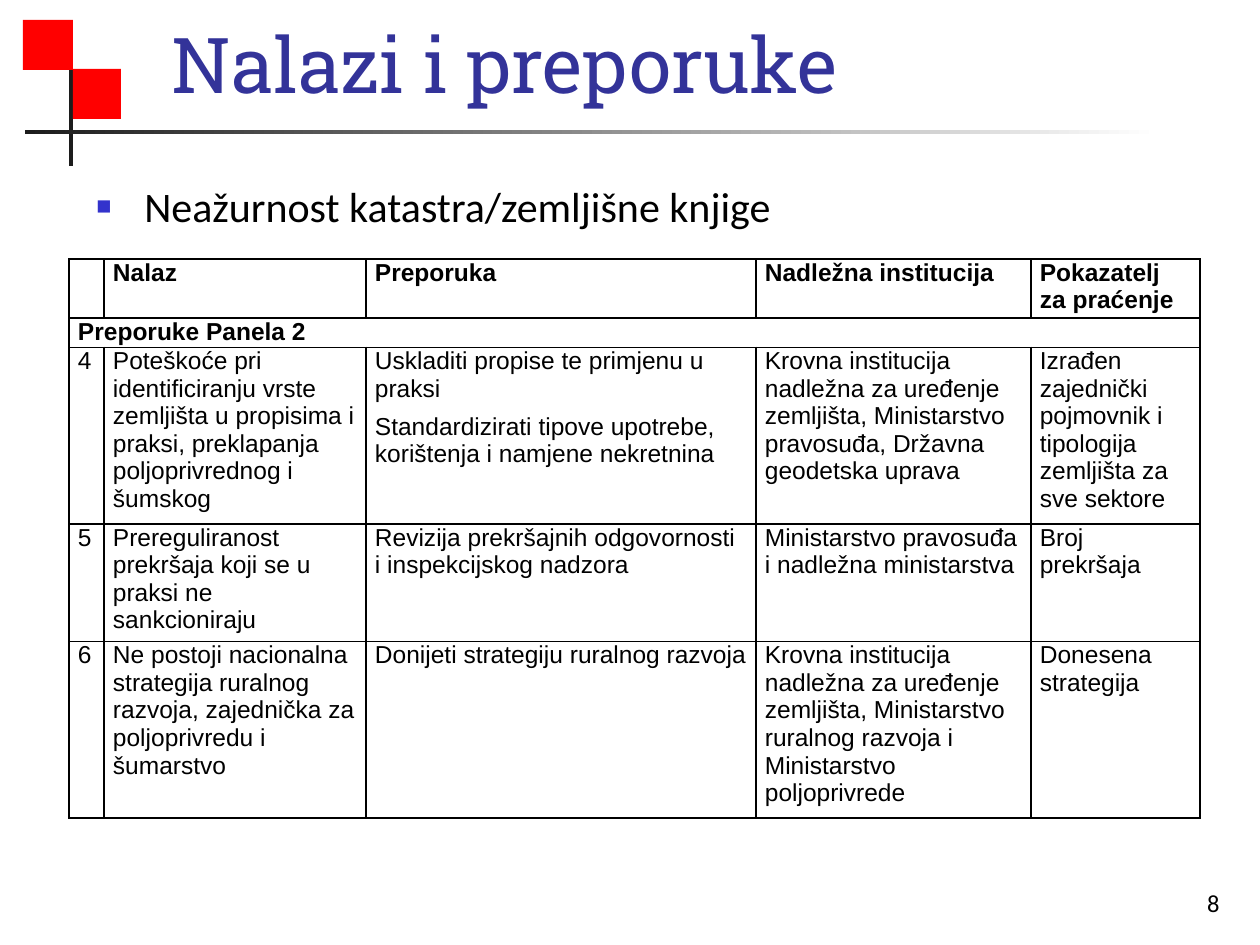
from dataclasses import dataclass

from lxml import etree
from pptx import Presentation, util as u
from pptx.dml.color import RGBColor
from pptx.enum import shapes, text
from pptx.oxml import ns


@dataclass(frozen=True)
class Theme:
    """Hold the colours, fonts and type sizes."""
    red: str = "FF0000"
    dark: str = "1C1C1C"
    white: str = "FFFFFF"
    black: str = "000000"
    navy: str = "333399"
    blue: str = "3333CC"
    head: str = "Roboto Slab"
    body: str = "Calibri"
    grid: str = "Arial"
    big: int = 44
    mid: int = 24
    small: int = 14


T = Theme()
COLS = (35, 262, 390, 275, 169)
ROWS = (55, 27, 165, 110, 165)
CELLS = (
    ("", "Nalaz", "Preporuka", "Nadležna institucija", "Pokazatelj za praćenje"),
    ("Preporuke Panela 2",),
    ("4",
     "Poteškoće pri identificiranju vrste zemljišta u propisima i praksi, "
     "preklapanja poljoprivrednog i šumskog",
     "Uskladiti propise te primjenu u praksi\n"
     "Standardizirati tipove upotrebe, korištenja i namjene nekretnina",
     "Krovna institucija nadležna za uređenje zemljišta, Ministarstvo "
     "pravosuđa, Državna geodetska uprava",
     "Izrađen zajednički pojmovnik i tipologija zemljišta za sve sektore"),
    ("5",
     "Prereguliranost prekršaja koji se u praksi ne sankcioniraju",
     "Revizija prekršajnih odgovornosti i inspekcijskog nadzora",
     "Ministarstvo pravosuđa i nadležna ministarstva",
     "Broj prekršaja"),
    ("6",
     "Ne postoji nacionalna strategija ruralnog razvoja, zajednička za "
     "poljoprivredu i šumarstvo",
     "Donijeti strategiju ruralnog razvoja",
     "Krovna institucija nadležna za uređenje zemljišta, Ministarstvo "
     "ruralnog razvoja i Ministarstvo poljoprivrede",
     "Donesena strategija"),
)


def px(n):
    """Turn pixels into EMU."""
    return u.Emu(round(n * 914400 / 126))


def rgb(hue):
    """Turn a hex string into a colour."""
    return RGBColor.from_string(hue)


def sub(root, tag, **keys):
    """Append a drawing element with attributes."""
    return etree.SubElement(root, ns.qn(tag), **keys)


def write(frame, words, font=T.body, size=T.small, hue=T.black, bold=False,
          side=text.PP_ALIGN.LEFT, after=0):
    """Fill a text frame, one paragraph a line."""
    frame.word_wrap = True
    frame.text = words
    for par in frame.paragraphs:
        par.alignment = side
        par.space_before, par.space_after = u.Pt(0), u.Pt(after)
        for run in par.runs:
            run.font.name, run.font.size = font, u.Pt(size)
            run.font.bold, run.font.color.rgb = bold, rgb(hue)


def label(slide, box, words, anchor=text.MSO_ANCHOR.TOP, **form):
    """Add a text box and return its frame."""
    frame = slide.shapes.add_textbox(*map(px, box)).text_frame
    frame.vertical_anchor = anchor
    write(frame, words, **form)
    return frame


def bullet(par, mark, hue, size, hang):
    """Give a paragraph a coloured hanging bullet."""
    props = par._p.get_or_add_pPr()
    props.set("marL", str(px(hang)))
    props.set("indent", str(-px(hang)))
    sub(sub(props, "a:buClr"), "a:srgbClr", val=hue)
    sub(props, "a:buSzPct", val=str(size * 1000))
    sub(props, "a:buFont", typeface=T.grid)
    sub(props, "a:buChar", char=mark)


def block(slide, box, hue, fade=None):
    """Add a plain or fading rectangle."""
    rect = slide.shapes.add_shape(shapes.MSO_SHAPE.RECTANGLE, *map(px, box))
    rect.shadow.inherit = False
    rect.line.fill.background()
    if fade:
        rect.fill.gradient()
        rect.fill.gradient_angle = 0
        for stop, tone, spot in zip(rect.fill.gradient_stops, (hue, fade), (0, 1)):
            stop.color.rgb, stop.position = rgb(tone), spot
    else:
        rect.fill.solid()
        rect.fill.fore_color.rgb = rgb(hue)


def border(cell):
    """Draw a thin line on each side of a cell."""
    props = cell._tc.get_or_add_tcPr()
    for spot, side in enumerate("LRTB"):
        line = sub(props, f"a:ln{side}", w=str(u.Pt(1)))
        sub(sub(line, "a:solidFill"), "a:srgbClr", val=T.black)
        props.insert(spot, line)


def table(slide, left, top):
    """Add the table of findings."""
    box = map(px, (left, top, sum(COLS), sum(ROWS)))
    grid = slide.shapes.add_table(len(ROWS), len(COLS), *box).table
    grid.first_row = grid.horz_banding = False
    for col, wide in zip(grid.columns, COLS):
        col.width = px(wide)
    for row, high in zip(grid.rows, ROWS):
        row.height = px(high)
    for cell in grid.iter_cells():
        cell.margin_left = cell.margin_right = px(9)
        cell.margin_top = cell.margin_bottom = 0
        cell.fill.background()
        border(cell)
    for r, row in enumerate(CELLS):
        if len(row) == 1:
            grid.cell(r, 0).merge(grid.cell(r, len(COLS) - 1))
        for c, words in enumerate(row):
            write(grid.cell(r, c).text_frame, words, font=T.grid,
                  bold=r < 2, after=6)


def title(slide, box, words):
    """Place and format the title."""
    head = slide.shapes.title
    head.left, head.top, head.width, head.height = map(px, box)
    frame = head.text_frame
    frame.auto_size = text.MSO_AUTO_SIZE.NONE
    frame.vertical_anchor = text.MSO_ANCHOR.BOTTOM
    write(frame, words, font=T.head, size=T.big, hue=T.navy)


def main():
    """Build and save the slide."""
    deck = Presentation()
    deck.slide_width, deck.slide_height = px(1260), px(945)
    slide = deck.slides.add_slide(deck.slide_layouts[5])
    block(slide, (69, 21, 4, 145), T.dark)
    block(slide, (25, 130, 1134, 4), T.dark, fade=T.white)
    block(slide, (73, 69, 48, 50), T.red)
    block(slide, (23, 20, 50, 50), T.red)
    title(slide, (159, 15, 1074, 100), "Nalazi i preporuke")
    body = label(slide, (84, 174, 1131, 669),
                 "Neažurnost katastra/zemljišne knjige", size=T.mid)
    bullet(body.paragraphs[0], "■", T.blue, 60, 48)
    label(slide, (970, 861, 262, 63), "8", anchor=text.MSO_ANCHOR.BOTTOM,
          side=text.PP_ALIGN.RIGHT)
    table(slide, 69, 259)
    deck.save("out.pptx")


if __name__ == "__main__":
    main()
